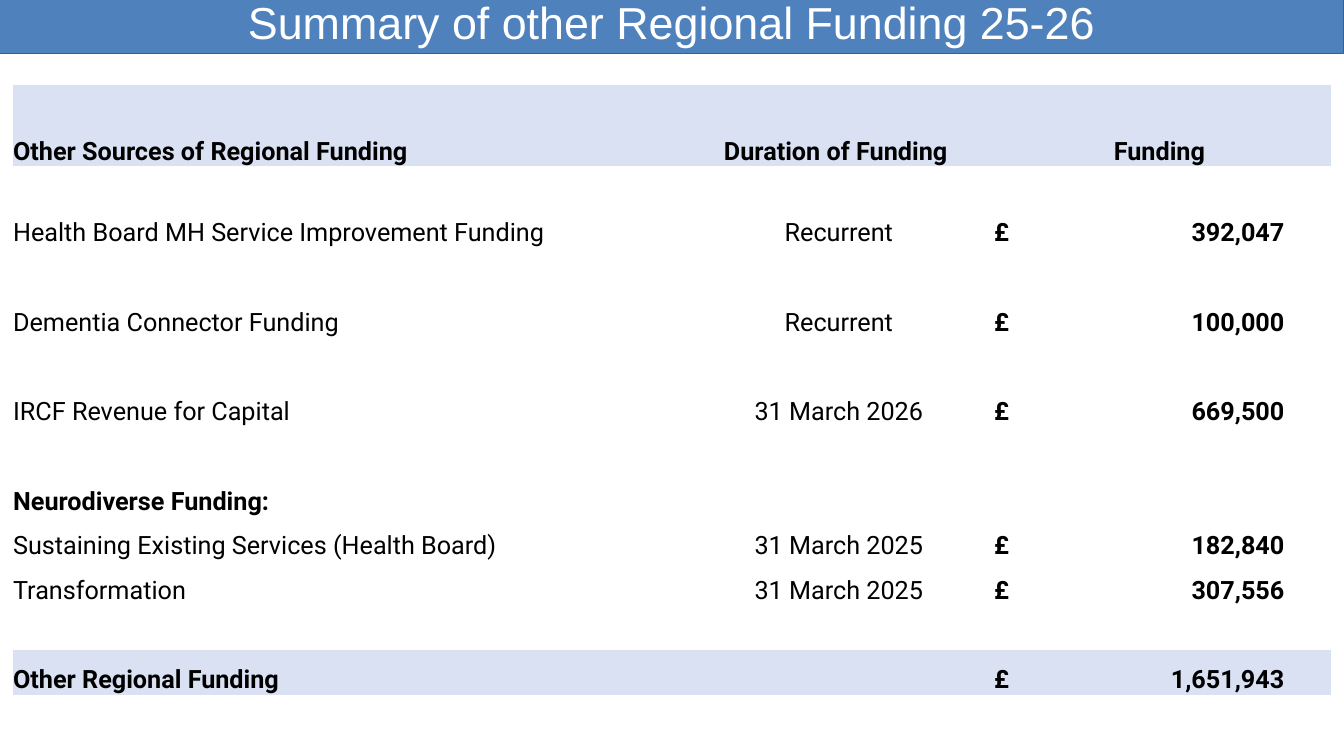
from pptx import Presentation
from pptx import util as u
from pptx.dml.color import RGBColor
from pptx.enum import shapes, text
from pptx.oxml import ns
from lxml import etree

COLORS = {"bar": "4F81BD", "edge": "376092", "band": "D9E1F2",
          "ink": "000000", "white": "FFFFFF"}
PLAIN = "{2D5ABB26-0587-4C30-8999-92F81FD0307C}"  # no style, no grid
ALIGN = text.PP_ALIGN
COLS = [6.71, 2.96, 3.4]
TALL = 0.81
PAD = 0.06   # left inset of the pound sign
STOP = 2.88  # right edge of the amounts
HEAD = ("Other Sources of Regional Funding", "Duration of Funding ", "Funding")
GAP = ("", "", "")
ROWS = [
    HEAD,
    ("Health Board MH Service Improvement Funding", "Recurrent", "392,047"),
    GAP,
    ("Dementia Connector Funding", "Recurrent", "100,000"),
    GAP,
    ("IRCF Revenue for Capital", "31 March 2026", "669,500"),
    GAP,
    ("Neurodiverse Funding:", "", ""),
    ("Sustaining Existing Services (Health Board)", "31 March 2025", "182,840"),
    ("Transformation", "31 March 2025", "307,556"),
    GAP,
    ("Other Regional Funding", "", "1,651,943"),
]


def color(name):
    return RGBColor.from_string(COLORS[name])


def style(para, font, size, ink, bold=False):
    for run in para.runs:
        run.font.name = font
        run.font.size = u.Pt(size)
        run.font.bold = bold
        run.font.color.rgb = color(ink)


def add_title(slide, left, top, width, height):
    bar = slide.shapes.add_shape(shapes.MSO_SHAPE.RECTANGLE, u.Inches(left),
                                 u.Inches(top), u.Inches(width), u.Inches(height))
    bar.shadow.inherit = False
    bar.fill.solid()
    bar.fill.fore_color.rgb = color("bar")
    bar.line.color.rgb = color("edge")
    bar.line.width = u.Pt(0.75)
    frame = bar.text_frame
    frame.word_wrap = True
    frame.vertical_anchor = text.MSO_ANCHOR.MIDDLE
    frame.text = "Summary of other Regional Funding 25-26"
    para = frame.paragraphs[0]
    para.alignment = ALIGN.CENTER
    style(para, "Arial", 32, "white")


def add_stop(para):
    """Set a right tab at the edge of the amounts."""
    props = para._p.get_or_add_pPr()
    tabs = etree.SubElement(props, ns.qn("a:tabLst"))
    etree.SubElement(tabs, ns.qn("a:tab"), pos=str(u.Inches(STOP)), algn="r")


def fill_cell(cell, value, col, row):
    head, total = row is HEAD, row is ROWS[-1]
    money = col == 2 and not head
    cell.margin_left = u.Inches(PAD if money else 0)
    cell.margin_right = cell.margin_top = cell.margin_bottom = 0
    cell.vertical_anchor = text.MSO_ANCHOR.BOTTOM
    if head or total:
        cell.fill.solid()
        cell.fill.fore_color.rgb = color("band")
    else:
        cell.fill.background()
    if not value:
        return
    para = cell.text_frame.paragraphs[0]
    para.text = f"£\t{value}" if money else value
    if money:
        add_stop(para)
    else:
        para.alignment = ALIGN.CENTER if col else ALIGN.LEFT
    style(para, "Roboto", 18, "ink", head or total or money or value.endswith(":"))


def add_funds(slide, left, top, width, height):
    frame = slide.shapes.add_table(len(ROWS), len(COLS), u.Inches(left),
                                   u.Inches(top), u.Inches(width), u.Inches(height))
    next(frame.element.iter(ns.qn("a:tableStyleId"))).text = PLAIN
    table = frame.table
    table.first_row = table.horz_banding = False
    for col, size in enumerate(COLS):
        table.columns[col].width = u.Inches(size)
    low = (height - 2 * TALL) / (len(ROWS) - 2)
    for num, row in enumerate(ROWS):
        table.rows[num].height = u.Inches(TALL if num < 2 else low)
        for col, value in enumerate(row):
            fill_cell(table.cell(num, col), value, col, row)


def main():
    deck = Presentation()
    deck.slide_width = u.Inches(13.33)
    deck.slide_height = u.Inches(7.5)
    slide = deck.slides.add_slide(deck.slide_layouts[6])
    add_title(slide, 0, -0.11, 13.33, 0.64)
    add_funds(slide, 0.13, 0.84, 13.07, 6.06)
    deck.save("out.pptx")


if __name__ == "__main__":
    main()
